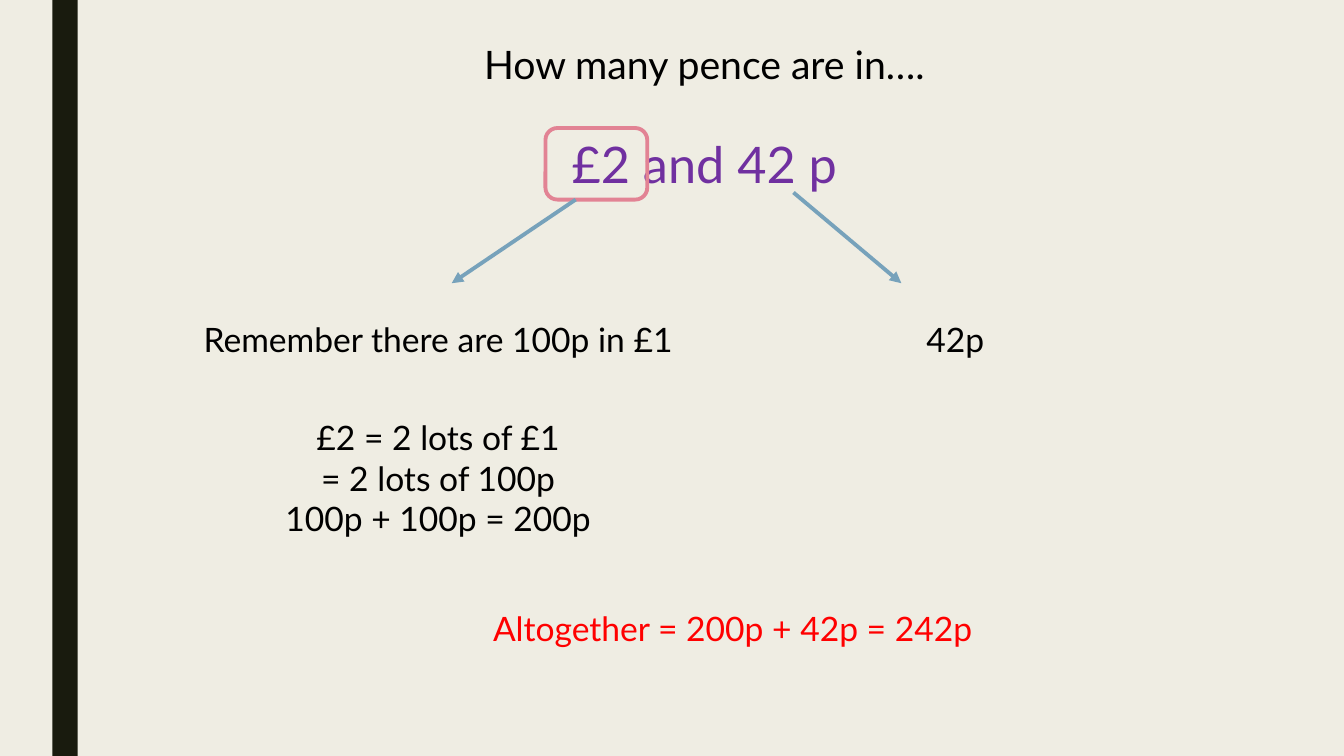
from lxml import etree
from pptx import Presentation
from pptx.dml.color import RGBColor
from pptx.enum import shapes, text
from pptx.oxml import ns
from pptx.util import Inches, Pt

CREAM = RGBColor(0xEF, 0xED, 0xE3)
DARK = RGBColor(0x19, 0x1B, 0x0E)
BLACK = RGBColor(0, 0, 0)
PURPLE = RGBColor(0x70, 0x30, 0xA0)
RED = RGBColor(0xFF, 0, 0)
PINK = RGBColor(0xE2, 0x83, 0x94)
BLUE = RGBColor(0x77, 0xA2, 0xBB)

FONT = "Lato"
LINE_WIDTH = Pt(2.75)
WIDE, NARROW = 10.59, 4.97
POUNDS_LEFT, PENCE_LEFT = 1.86, 6.99

# lines, (left, top, width, height), size, colour
STEPS = [
    (["How many pence are in…."], (1.69, 0.35, WIDE, 0.57), 28, BLACK),
    (["£2 and 42 p"], (1.69, 1.27, WIDE, 0.71), 36, PURPLE),
    (["Remember there are 100p in £1"], (POUNDS_LEFT, 3.11, NARROW, 0.5), 24, BLACK),
    (["£2 = 2 lots of £1", "= 2 lots of 100p", "100p + 100p = 200p"],
     (POUNDS_LEFT, 4.09, NARROW, 1.31), 24, BLACK),
    (["42p"], (PENCE_LEFT, 3.11, NARROW, 0.5), 24, BLACK),
    (["Altogether = 200p + 42p = 242p"], (1.97, 5.98, WIDE, 0.5), 24, RED),
]
SIDE_BAR = (0.52, 0, 0.25, 7.5)
POUNDS_RING = (5.41, 1.27, 1.01, 0.71)
ARROWS = [(5.71, 1.98, 4.48, 2.81), (7.87, 1.91, 8.94, 2.81)]


def inches(values):
    return [Inches(value) for value in values]


def add_step(slide, lines, box, size, colour):
    frame = slide.shapes.add_textbox(*inches(box)).text_frame
    frame.word_wrap = True
    frame.auto_size = text.MSO_AUTO_SIZE.SHAPE_TO_FIT_TEXT
    for index, line in enumerate(lines):
        paragraph = frame.add_paragraph() if index else frame.paragraphs[0]
        paragraph.alignment = text.PP_ALIGN.CENTER
        run = paragraph.add_run()
        run.text = line
        run.font.name = FONT
        run.font.size = Pt(size)
        run.font.color.rgb = colour


def add_arrow(slide, ends):
    arrow = slide.shapes.add_connector(shapes.MSO_CONNECTOR.STRAIGHT, *inches(ends))
    arrow.line.color.rgb = BLUE
    arrow.line.width = LINE_WIDTH
    etree.SubElement(arrow.line._get_or_add_ln(), ns.qn("a:tailEnd"), type="triangle")
    etree.SubElement(arrow._element.spPr, ns.qn("a:effectLst"))


def main():
    deck = Presentation()
    deck.slide_width, deck.slide_height = Inches(13.33), Inches(7.5)
    slide = deck.slides.add_slide(deck.slide_layouts[6])
    slide.background.fill.solid()
    slide.background.fill.fore_color.rgb = CREAM

    bar = slide.shapes.add_shape(shapes.MSO_SHAPE.RECTANGLE, *inches(SIDE_BAR))
    bar.shadow.inherit = False
    bar.fill.solid()
    bar.fill.fore_color.rgb = DARK
    bar.line.fill.background()

    for step in STEPS:
        add_step(slide, *step)

    ring = slide.shapes.add_shape(shapes.MSO_SHAPE.ROUNDED_RECTANGLE, *inches(POUNDS_RING))
    ring.shadow.inherit = False
    ring.fill.background()
    ring.line.color.rgb = PINK
    ring.line.width = LINE_WIDTH

    for ends in ARROWS:
        add_arrow(slide, ends)

    deck.save("out.pptx")


if __name__ == "__main__":
    main()
